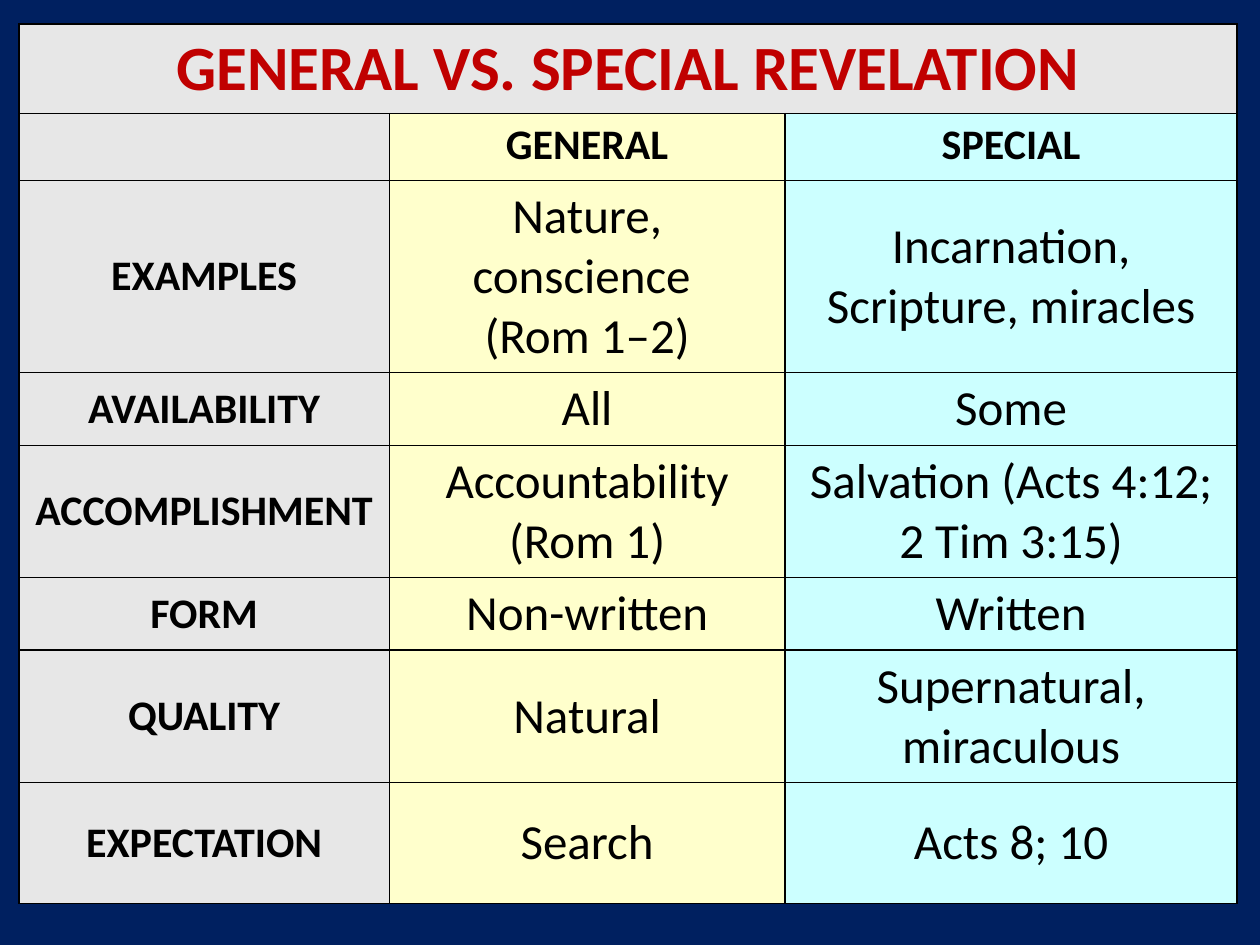
from dataclasses import dataclass

from lxml import etree
from pptx import Presentation
from pptx import util as u
from pptx.dml.color import RGBColor
from pptx.enum import text
from pptx.oxml.ns import qn
from pptx.table import Table, _Cell


@dataclass(frozen=True)
class Theme:
    font: str = "Calibri"
    background: str = "002060"
    title: str = "C00000"
    ink: str = "000000"
    column_fills: tuple[str, ...] = ("E7E7E7", "FFFFCC", "CCFFFF")
    title_size: int = 36
    label_size: int = 24
    body_size: int = 28
    border_width: int = 1


@dataclass(frozen=True)
class Comparison:
    label: str
    general: str
    special: str
    height: float


THEME = Theme()
TITLE = "GENERAL VS. SPECIAL REVELATION"
TITLE_HEIGHT = 0.69
COLUMN_WIDTHS = (2.94, 3.14, 3.59)
HEADER = Comparison("", "GENERAL", "SPECIAL", 0.53)
COMPARISONS = (
    Comparison("EXAMPLES", "Nature, conscience \n(Rom 1–2)",
               "Incarnation, Scripture, miracles", 1.4),
    Comparison("AVAILABILITY", "All", "Some", 0.53),
    Comparison("ACCOMPLISHMENT", "Accountability (Rom 1)",
               "Salvation (Acts 4:12; 2 Tim 3:15)", 0.96),
    Comparison("FORM", "Non-written", "Written", 0.53),
    Comparison("QUALITY", "Natural", "Supernatural, miraculous", 0.96),
    Comparison("EXPECTATION", "Search", "Acts 8; 10", 0.96),
)


def write_text(cell: _Cell, content: str, *, size: int, bold: bool = False,
               color: str = THEME.ink, middle: bool = True) -> None:
    """Fill a cell with centred text, one paragraph per line of content."""
    cell.text = content
    cell.vertical_anchor = text.MSO_ANCHOR.MIDDLE if middle else text.MSO_ANCHOR.TOP
    for paragraph in cell.text_frame.paragraphs:
        paragraph.alignment = text.PP_ALIGN.CENTER
        for run in paragraph.runs:
            run.font.name = THEME.font
            run.font.size = u.Pt(size)
            run.font.bold = bold
            run.font.color.rgb = RGBColor.from_string(color)


def style_cell(cell: _Cell, fill: str) -> None:
    properties = cell._tc.get_or_add_tcPr()
    for side in ("a:lnL", "a:lnR", "a:lnT", "a:lnB"):
        line = etree.SubElement(properties, qn(side), w=str(u.Pt(THEME.border_width)))
        line_fill = etree.SubElement(line, qn("a:solidFill"))
        etree.SubElement(line_fill, qn("a:srgbClr"), val=THEME.ink)
    cell.fill.solid()
    cell.fill.fore_color.rgb = RGBColor.from_string(fill)


def fill_row(table: Table, row: int, comparison: Comparison, *, header: bool = False) -> None:
    table.rows[row].height = u.Inches(comparison.height)
    contents = (comparison.label, comparison.general, comparison.special)
    for column, (content, fill) in enumerate(zip(contents, THEME.column_fills)):
        cell = table.cell(row, column)
        style_cell(cell, fill)
        is_label = header or column == 0
        write_text(cell, content, bold=is_label, middle=not header,
                   size=THEME.label_size if is_label else THEME.body_size)


def add_title_row(table: Table) -> None:
    table.rows[0].height = u.Inches(TITLE_HEIGHT)
    for cell in table.rows[0].cells:
        style_cell(cell, THEME.column_fills[0])
    title_cell = table.cell(0, 0)
    title_cell.merge(table.cell(0, len(COLUMN_WIDTHS) - 1))
    write_text(title_cell, TITLE, size=THEME.title_size, bold=True,
               color=THEME.title, middle=False)


def main() -> None:
    presentation = Presentation()
    presentation.slide_width, presentation.slide_height = u.Inches(10), u.Inches(7.5)
    slide = presentation.slides.add_slide(presentation.slide_layouts[6])
    slide.background.fill.solid()
    slide.background.fill.fore_color.rgb = RGBColor.from_string(THEME.background)

    height = TITLE_HEIGHT + HEADER.height + sum(item.height for item in COMPARISONS)
    table = slide.shapes.add_table(
        len(COMPARISONS) + 2, len(COLUMN_WIDTHS), u.Inches(0.15), u.Inches(0.19),
        u.Inches(sum(COLUMN_WIDTHS)), u.Inches(height)).table
    table.first_row = table.horz_banding = False
    for column, width in zip(table.columns, COLUMN_WIDTHS):
        column.width = u.Inches(width)

    add_title_row(table)
    fill_row(table, 1, HEADER, header=True)
    for row, comparison in enumerate(COMPARISONS, start=2):
        fill_row(table, row, comparison)
    presentation.save("out.pptx")


if __name__ == "__main__":
    main()
